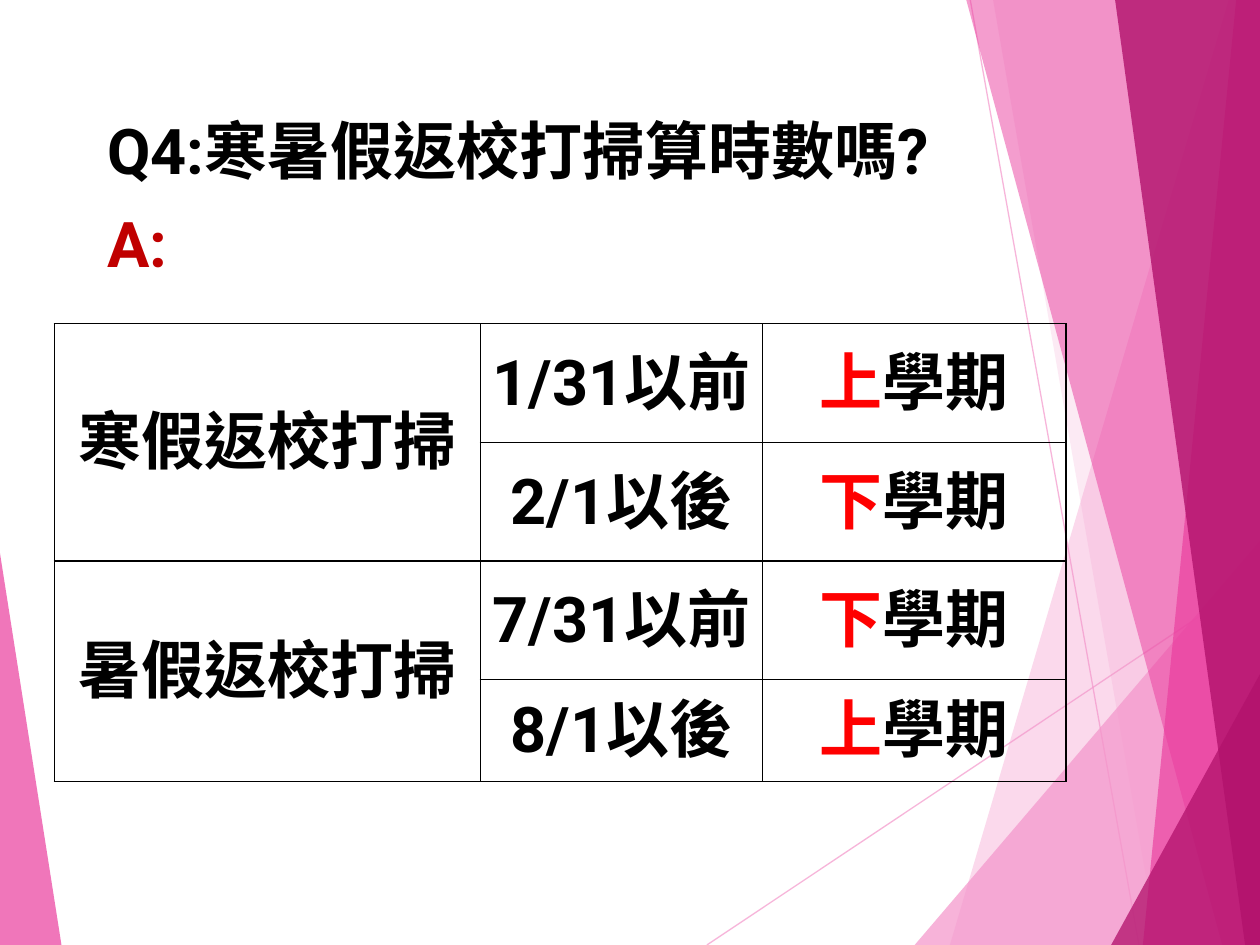
"""Build a slide on which term counts the hours of holiday school cleaning."""
import pptx
import pptx.util
import pptx.dml.color
import pptx.enum.shapes
import pptx.enum.text
import pptx.oxml
import pptx.oxml.ns

Cm, Pt = pptx.util.Cm, pptx.util.Pt
WIDE, HIGH = 25.4, 19.05
FONT, SIZE = "Roboto", 36
HUES = {"ink": "000000", "answer": "C00000", "term": "FF0000",
        "pale": "F496CB", "pink": "EA3C9E", "deep": "B2126C"}

RAYS = [((14.25, HIGH), (WIDE, 11.61)), ((19.56, 0), (22.96, HIGH))]
SHARDS = [
    ("pale", 36, [(24.77, 0), (19.15, HIGH), (WIDE, HIGH), (WIDE, 0)]),
    ("pale", 20, [(20.02, 0), (23.34, HIGH), (WIDE, HIGH), (WIDE, 0)]),
    ("pale", 72, [(18.44, HIGH), (WIDE, 10.9), (WIDE, HIGH)]),
    ("pink", 50, [(19.48, 0), (24.64, HIGH), (WIDE, HIGH), (WIDE, 0)]),
    ("pink", 66, [(24.92, 0), (23.04, HIGH), (WIDE, HIGH), (WIDE, 0)]),
    ("deep", 80, [(22.48, 0), (25.1, HIGH), (WIDE, HIGH), (WIDE, 0)]),
    ("deep", 76, [(22.4, HIGH), (WIDE, 13.59), (WIDE, HIGH)]),
    ("pink", 70, [(0, 11.15), (1.24, HIGH), (0, HIGH)]),
]
HEAD = [("Q4:寒暑假返校打掃算時數嗎?", "ink"), ("A:", "answer")]
BREAKS = [
    ("寒假返校打掃", [("1/31以前", "上"), ("2/1以後", "下")]),
    ("暑假返校打掃", [("7/31以前", "下"), ("8/1以後", "上")]),
]
COLS = [8.59, 5.69, 6.12]
ROWS = [2.39, 2.39, 2.39, 2.06]


def hue(name):
    return pptx.dml.color.RGBColor.from_string(HUES[name])


def node(tag, base, **attrs):
    item = pptx.oxml.parse_xml(f"<a:{tag} {pptx.oxml.ns.nsdecls('a')}/>")
    for key, value in attrs.items():
        item.set(key, str(value))
    base.append(item)
    return item


def fade(part, alpha):
    tint = next(part.iter(pptx.oxml.ns.qn("a:srgbClr")))
    node("alpha", tint, val=alpha * 1000)


def write(para, text, color):
    run = para.add_run()
    run.text = text
    font = run.font
    font.name, font.size, font.bold = FONT, Pt(SIZE), True
    font.color.rgb = hue(color)
    props = run._r.get_or_add_rPr()
    props.set("lang", "zh-TW")
    node("ea", props, typeface=FONT)


def draw_ray(shapes, start, end):
    kind = pptx.enum.shapes.MSO_CONNECTOR.STRAIGHT
    ray = shapes.add_connector(kind, *map(Cm, start + end))
    ray.line.color.rgb, ray.line.width = hue("pale"), Pt(0.75)
    props = ray._element.spPr
    fade(props, 70)
    node("effectLst", props)


def draw_shard(shapes, color, alpha, points):
    first, *rest = [tuple(map(Cm, point)) for point in points]
    pen = shapes.build_freeform(*first)
    pen.add_line_segments(rest, close=True)
    shard = pen.convert_to_shape()
    shard.shadow.inherit = False
    shard.fill.solid()
    shard.fill.fore_color.rgb = hue(color)
    fade(shard._element.spPr, alpha)
    shard.line.fill.background()


def add_head(shapes):
    frame = shapes.add_textbox(Cm(1.91), Cm(2.13), Cm(20.7), Cm(3.99)).text_frame
    frame.word_wrap = True
    for i, (text, color) in enumerate(HEAD):
        para = frame.add_paragraph() if i else frame.paragraphs[0]
        para.space_before = Pt(10 * i)
        write(para, text, color)


def style(cell):
    cell.margin_left = cell.margin_right = cell.margin_top = Cm(0.03)
    cell.margin_bottom = 0
    cell.vertical_anchor = pptx.enum.text.MSO_ANCHOR.MIDDLE
    props = cell._tc.get_or_add_tcPr()
    for side in ("lnL", "lnR", "lnT", "lnB"):
        edge = node(side, props, w=Pt(0.75))
        node("srgbClr", node("solidFill", edge), val=HUES["ink"])
    cell.fill.background()


def fill_cell(cell, *runs):
    para = cell.text_frame.paragraphs[0]
    para.alignment = pptx.enum.text.PP_ALIGN.CENTER
    for text, color in runs:
        write(para, text, color)


def add_grid(shapes):
    grid = shapes.add_table(len(ROWS), len(COLS), Cm(1.09), Cm(6.53),
                            Cm(sum(COLS)), Cm(sum(ROWS))).table
    grid.first_row = grid.horz_banding = False
    for col, wide in zip(grid.columns, COLS):
        col.width = Cm(wide)
    for row, high in zip(grid.rows, ROWS):
        row.height = Cm(high)
    for cell in grid.iter_cells():
        style(cell)
    top = 0
    for name, terms in BREAKS:
        grid.cell(top, 0).merge(grid.cell(top + len(terms) - 1, 0))
        fill_cell(grid.cell(top, 0), (name, "ink"))
        for row, (date, term) in enumerate(terms, top):
            fill_cell(grid.cell(row, 1), (date, "ink"))
            fill_cell(grid.cell(row, 2), (term, "term"), ("學期", "ink"))
        top += len(terms)


def main():
    deck = pptx.Presentation()
    deck.slide_width, deck.slide_height = Cm(WIDE), Cm(HIGH)
    shapes = deck.slides.add_slide(deck.slide_layouts[6]).shapes
    for start, end in RAYS:
        draw_ray(shapes, start, end)
    for shard in SHARDS:
        draw_shard(shapes, *shard)
    add_head(shapes)
    add_grid(shapes)
    deck.save("out.pptx")


if __name__ == "__main__":
    main()
